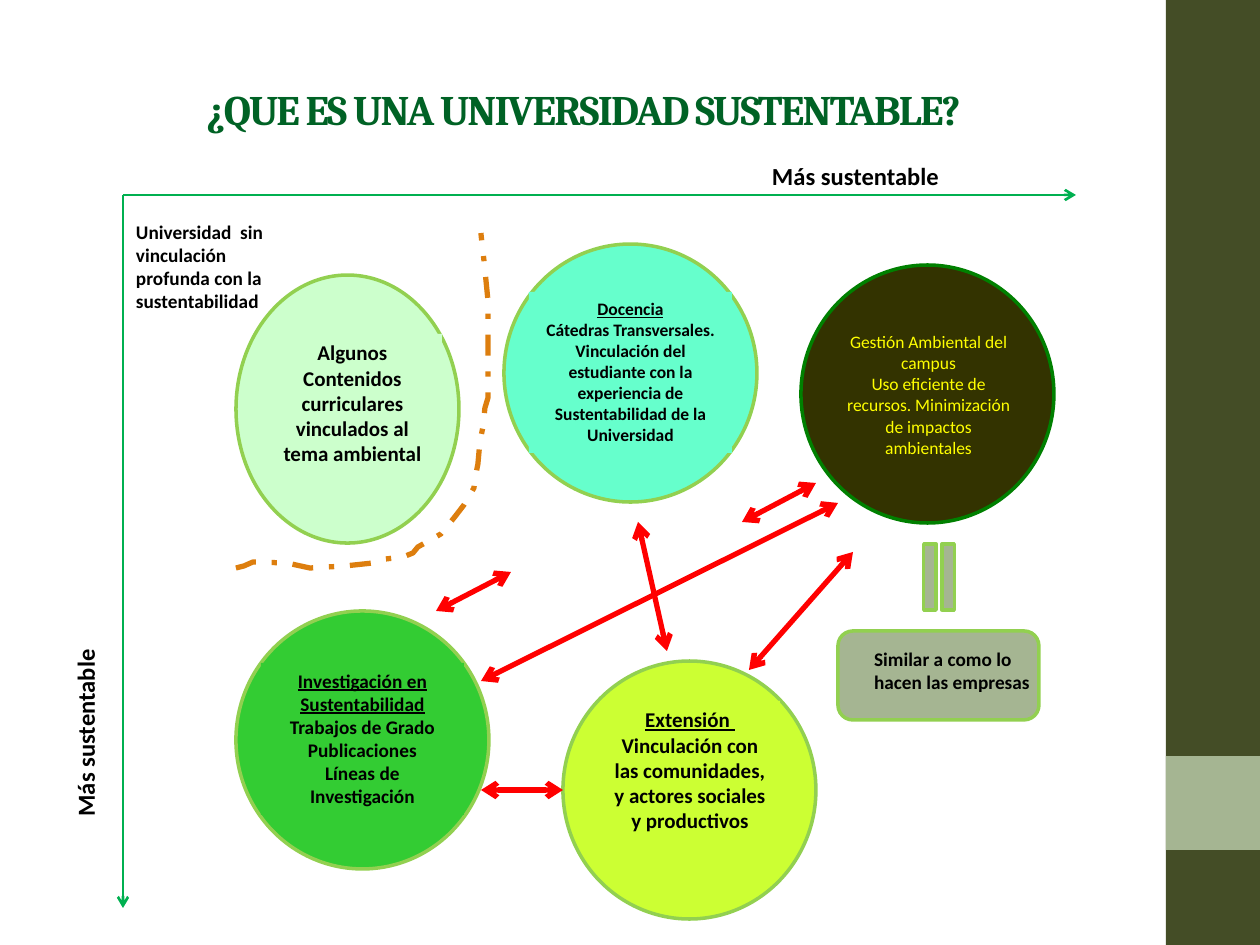
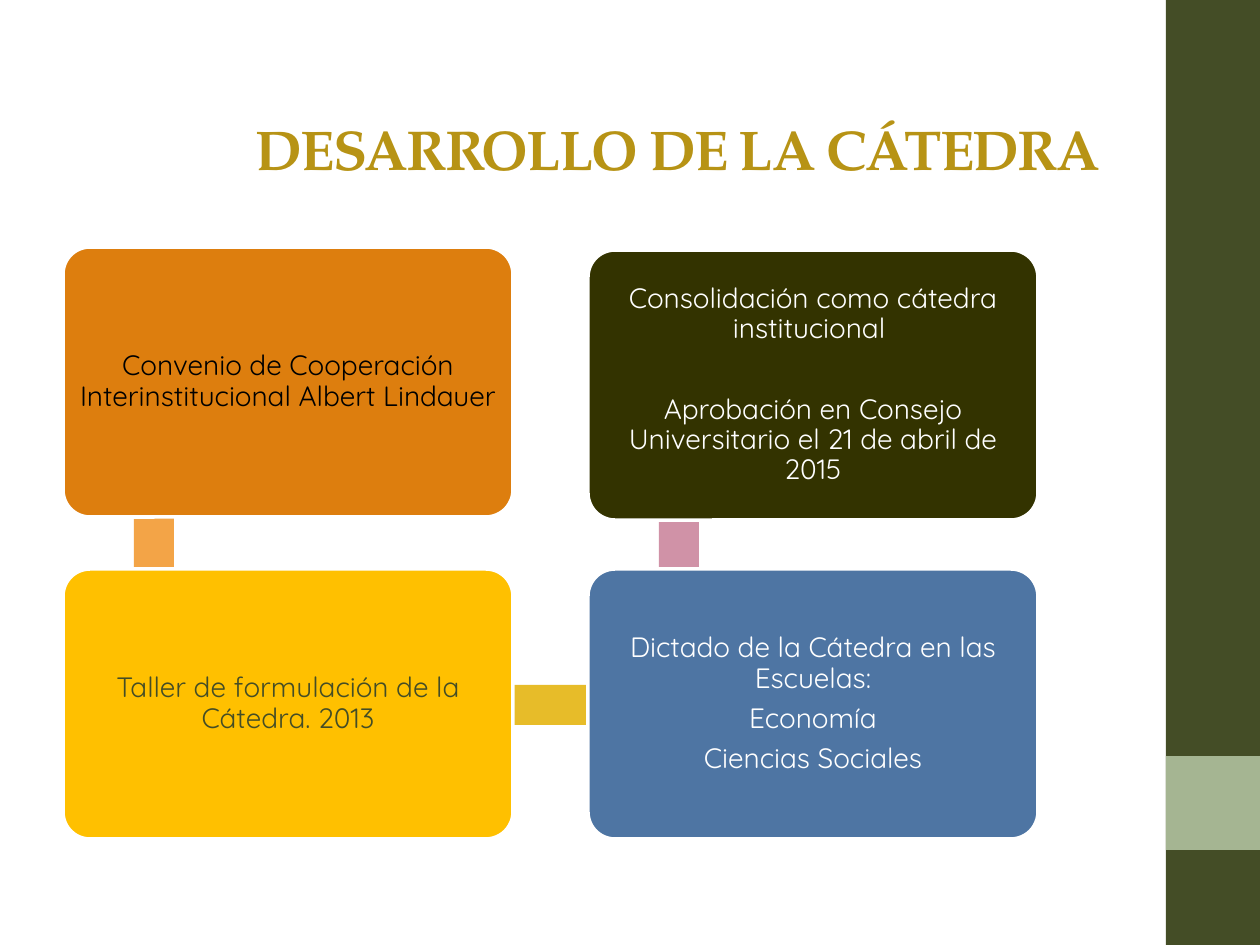
from dataclasses import dataclass
from lxml import etree
from pptx import Presentation
from pptx.dml.color import RGBColor
from pptx.enum.dml import MSO_LINE
from pptx.enum.shapes import MSO_CONNECTOR, MSO_SHAPE
from pptx.enum.text import MSO_ANCHOR, PP_ALIGN
from pptx.oxml.ns import qn
from pptx.util import Emu, Pt

RECT, ROUND = MSO_SHAPE.RECTANGLE, MSO_SHAPE.ROUNDED_RECTANGLE
OVAL, EQUALS = MSO_SHAPE.OVAL, MSO_SHAPE.MATH_EQUAL
STRAIGHT, DASH_DOT = MSO_CONNECTOR.STRAIGHT, MSO_LINE.DASH_DOT
LEFT, CENTER, RIGHT = PP_ALIGN.LEFT, PP_ALIGN.CENTER, PP_ALIGN.RIGHT
TOP, MIDDLE, BOTTOM = MSO_ANCHOR.TOP, MSO_ANCHOR.MIDDLE, MSO_ANCHOR.BOTTOM
PX_PER_INCH = 126
SLIDE_W, SLIDE_H = 1260, 945


@dataclass(frozen=True)
class Theme:
    # Colours
    olive: str = "444D26"
    sage: str = "A5B592"
    white: str = "FFFFFF"
    black: str = "000000"
    yellow: str = "FFFF00"
    title_green: str = "006225"
    title_gold: str = "B79315"
    dark: str = "333300"
    dark_edge: str = "008000"
    edge: str = "92D050"
    pale_green: str = "CCFFCC"
    aqua: str = "66FFCC"
    green: str = "33CC33"
    lime: str = "CCFF33"
    red: str = "FF0000"
    axis: str = "00B050"
    orange: str = "DD7E0E"
    amber: str = "FFC000"
    blue: str = "4E75A3"
    link_orange: str = "F3A447"
    link_gold: str = "E7BC29"
    link_pink: str = "D092A7"
    # Fonts and sizes in points
    body: str = "Calibri"
    title_serif: str = "Cambria"
    title_roman: str = "TeX Gyre Pagella"
    step_font: str = "Quicksand"
    small: int = 10
    note: int = 11
    medium: int = 12
    axis_label: int = 14
    step: int = 16
    title: int = 24
    big_title: int = 32


THEME = Theme()


def px(length):
    return Emu(round(length * 914400 / PX_PER_INCH))


def rgb(code):
    return RGBColor.from_string(code)


def text_style(size, color=THEME.black, name=THEME.body, bold=True):
    return {"color": color, "font": {"size": Pt(size), "name": name, "bold": bold}}


def set_all(target, values):
    for name, value in values.items():
        setattr(target, name, value)


def write(box, lines, style, align=LEFT, anchor=TOP, margins=(13, 6),
          underlined=0, spacing=0, para_formats=()):
    """Fill a box with paragraphs; the first `underlined` ones get a rule."""
    side, edge = map(px, margins)
    frame = box.text_frame
    set_all(frame, {"word_wrap": True, "vertical_anchor": anchor,
                    "margin_left": side, "margin_right": side,
                    "margin_top": edge, "margin_bottom": edge})
    for index, line in enumerate(lines):
        para = frame.paragraphs[0] if index == 0 else frame.add_paragraph()
        para.alignment = align
        set_all(para, dict(para_formats))
        span = para.add_run()
        span.text = line
        set_all(span.font, style["font"])
        span.font.color.rgb = rgb(style["color"])
        if index < underlined:
            span.font.underline = True
        if spacing:
            span._r.get_or_add_rPr().set("spc", str(spacing))
    return frame


def add_form(slide, kind, place, fill, edge=None, turn=0):
    form = slide.shapes.add_shape(kind, *map(px, place))
    form.shadow.inherit = False
    form.rotation = turn
    form.fill.solid()
    form.fill.fore_color.rgb = rgb(fill)
    if edge:
        form.line.color.rgb = rgb(edge)
        form.line.width = Pt(2)
    else:
        form.line.fill.background()
    return form


def add_label(slide, place, lines, style, turn=0, **layout):
    label = slide.shapes.add_textbox(*map(px, place))
    label.rotation = turn
    write(label, lines, style, **layout)


def add_bubble(slide, place, panel_place, fill, edge, lines, style, **layout):
    """An ellipse with a text panel of the same colour over it."""
    add_form(slide, OVAL, place, fill, edge)
    panel = add_form(slide, RECT, panel_place, fill)
    write(panel, lines, style, align=CENTER, **layout)


def add_arrow(slide, ends, color, width, tips):
    arrow = slide.shapes.add_connector(STRAIGHT, *map(px, ends))
    arrow.line.color.rgb = rgb(color)
    arrow.line.width = Pt(width)
    line = arrow.line._get_or_add_ln()
    for tip in tips:
        etree.SubElement(line, qn(f"a:{tip}"), type="arrow")
    etree.SubElement(arrow._element.spPr, qn("a:effectLst"))


def add_boundary(slide, points):
    scaled = [(px(x), px(y)) for x, y in points]
    builder = slide.shapes.build_freeform(*scaled[0])
    builder.add_line_segments(scaled[1:], close=False)
    boundary = builder.convert_to_shape()
    boundary.shadow.inherit = False
    boundary.fill.background()
    boundary.line.color.rgb = rgb(THEME.orange)
    set_all(boundary.line, {"width": Pt(3), "dash_style": DASH_DOT})


def add_page(deck, title, place, style, **layout):
    """A blank page with the side band and its title."""
    page = deck.slides.add_slide(deck.slide_layouts[6])
    add_form(page, RECT, (1166, 0, 94, SLIDE_H), THEME.olive)
    add_form(page, RECT, (1166, 756, 94, 94), THEME.sage)
    add_label(page, place, [title], style, spacing=-100, **layout)
    return page


def build_sustainable_university(deck):
    page = add_page(deck, "¿QUE ES UNA UNIVERSIDAD SUSTENTABLE?", (107, 55, 953, 108),
                    text_style(THEME.title, THEME.title_green, THEME.title_serif),
                    align=CENTER, anchor=MIDDLE)
    small, note, medium = map(text_style, (THEME.small, THEME.note, THEME.medium))
    circle = (253, 258)

    # Fields of the university
    add_bubble(page, (801, 265, *circle), (830, 320, 197, 149), THEME.dark, THEME.dark_edge,
               ["Gestión Ambiental del campus",
                "Uso eficiente de recursos. Minimización de impactos ambientales"],
               text_style(THEME.small, THEME.yellow, bold=False), anchor=MIDDLE)
    add_bubble(page, (236, 275, 223, 268), (263, 334, 179, 140), THEME.pale_green, THEME.edge,
               ["Algunos Contenidos curriculares vinculados al tema ambiental"], medium)
    add_bubble(page, (504, 244, *circle), (529, 292, 203, 161), THEME.aqua, THEME.edge,
               ["Docencia", "Cátedras Transversales.",
                "Vinculación del estudiante con la experiencia de "
                "Sustentabilidad de la Universidad"], small, underlined=1)
    add_bubble(page, (236, 611, *circle), (261, 663, 203, 152), THEME.green, THEME.edge,
               ["Investigación en Sustentabilidad", "Trabajos de Grado",
                "Publicaciones", "Líneas de Investigación"], note, underlined=1)
    add_bubble(page, (563, 661, *circle), (600, 701, 180, 140), THEME.lime, THEME.edge,
               ["Extensión ",
                "Vinculación con las comunidades, y actores sociales y productivos"],
               medium, underlined=1)

    # Comparison with companies
    add_form(page, ROUND, (838, 631, 201, 89), THEME.sage, THEME.edge)
    add_label(page, (861, 641, 195, 59), ["Similar a como lo hacen las empresas"], note)
    add_form(page, EQUALS, (894, 551, 90, 52), THEME.sage, THEME.edge, turn=90)

    # Links between fields
    for ends in ((742, 522, 816, 483), (436, 611, 511, 572), (481, 681, 838, 503),
                 (749, 670, 853, 552), (481, 790, 563, 790), (638, 522, 667, 651)):
        add_arrow(page, ends, THEME.red, 3, ("headEnd", "tailEnd"))

    # Boundary around the first stage
    add_boundary(page, [
        (236, 568), (244, 566), (253, 562), (287, 563), (310, 568), (345, 566), (373, 563),
        (386, 559), (403, 557), (413, 553), (418, 547), (432, 539), (441, 534), (454, 518),
        (464, 505), (474, 488), (476, 474), (478, 464), (480, 442), (483, 427), (485, 408),
        (488, 398), (488, 350), (488, 300), (484, 260), (483, 252), (481, 233)])

    # Axes
    origin = (123, 195)
    for tip in ((1076, origin[1]), (origin[0], 908)):
        add_arrow(page, origin + tip, THEME.axis, 1.5, ("tailEnd",))
    for place, turn in (((759, 155, 248, 43), 0), ((-38, 684, 248, 43), 270)):
        add_label(page, place, ["Más sustentable"], text_style(THEME.axis_label), turn=turn)
    add_label(page, (123, 214, 189, 106),
              ["Universidad  sin vinculación profunda con la sustentabilidad"], note)


def build_course_development(deck):
    page = add_page(deck, "DESARROLLO DE LA CÁTEDRA", (63, 38, 1050, 157),
                    text_style(THEME.big_title, THEME.title_gold, THEME.title_roman),
                    align=RIGHT, anchor=BOTTOM, margins=(13, 13))
    box_w, box_h = 450, 270
    left, right = 63, 588
    lower = 569

    # Links, partly behind the steps
    for place, color in (((134, 315, 40, 320), THEME.link_orange),
                         ((155, 685, 523, 40), THEME.link_gold),
                         ((659, 318, 40, 316), THEME.link_pink)):
        add_form(page, RECT, place, color)

    # Steps
    steps = (
        (left, 247, THEME.orange, THEME.black,
         ["Convenio de Cooperación Interinstitucional Albert Lindauer "]),
        (left, lower, THEME.amber, THEME.olive,
         ["Taller de formulación de la Cátedra. 2013"]),
        (right, lower, THEME.blue, THEME.white,
         ["Dictado de la Cátedra en las Escuelas:", "Economía", "Ciencias Sociales"]),
        (right, 250, THEME.dark, THEME.white,
         ["Consolidación como cátedra institucional ",
          "Aprobación en Consejo Universitario el 21 de abril de 2015"]),
    )
    for x, y, fill, color, lines in steps:
        step = add_form(page, ROUND, (x, y, box_w, box_h), fill, THEME.white)
        step.adjustments[0] = 0.1
        frame = write(step, lines, text_style(THEME.step, color, THEME.step_font, False),
                      align=CENTER, anchor=MIDDLE, margins=(9, 9),
                      para_formats={"line_spacing": 0.9, "space_after": Pt(5.6)})
    # The approval stands apart within the last step
    frame.paragraphs[-1].space_before = Pt(23)


def main():
    deck = Presentation()
    set_all(deck, {"slide_width": px(SLIDE_W), "slide_height": px(SLIDE_H)})
    build_sustainable_university(deck)
    build_course_development(deck)
    deck.save("out.pptx")


if __name__ == "__main__":
    main()
